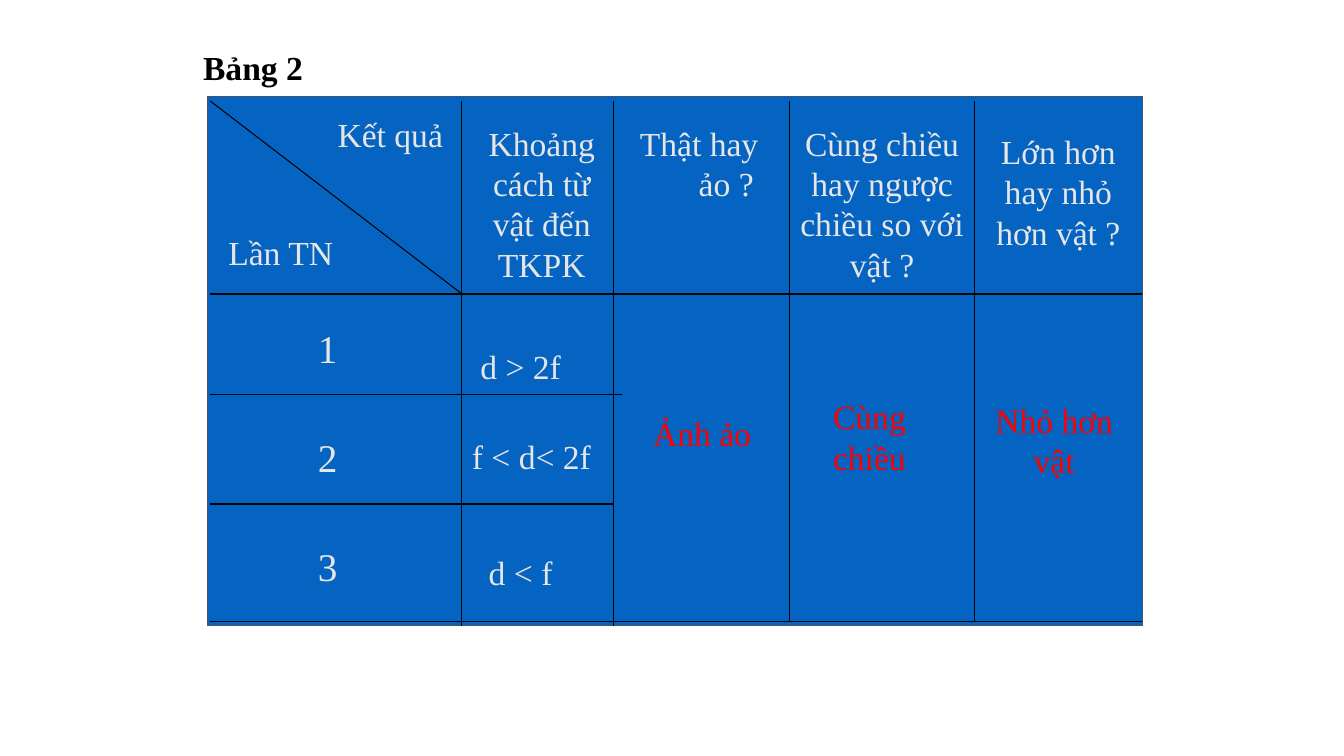
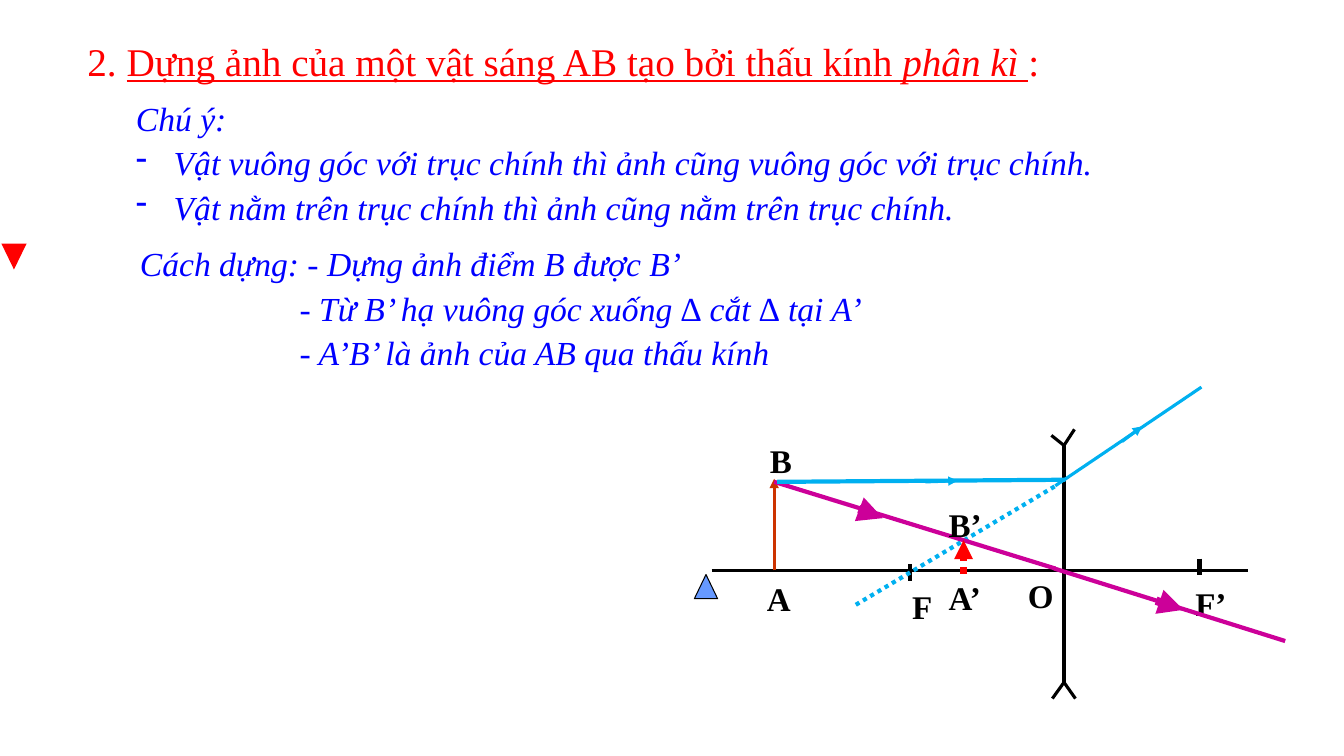
from dataclasses import dataclass, field
from typing import Optional

from lxml import etree
from pptx import Presentation
from pptx.dml.color import RGBColor
from pptx.enum import dml, shapes, text
from pptx.oxml import ns
from pptx.util import Pt

# Shared look
FONT = "Times New Roman"
BLACK = RGBColor(0x00, 0x00, 0x00)
RED = RGBColor(0xFF, 0x00, 0x00)
BLUE = RGBColor(0x00, 0x00, 0xFF)
LIGHT = RGBColor(0xE7, 0xE6, 0xE6)
TABLE_BLUE = RGBColor(0x05, 0x63, 0xC1)
TABLE_EDGE = RGBColor(0x44, 0x54, 0x6A)
OBJECT_BROWN = RGBColor(0xCC, 0x33, 0x00)
RAY_CYAN = RGBColor(0x00, 0xB0, 0xF0)
RAY_PURPLE = RGBColor(0xCC, 0x00, 0x99)
MARK_BLUE = RGBColor(0x66, 0x99, 0xFF)
LEFT, CENTER = text.PP_ALIGN.LEFT, text.PP_ALIGN.CENTER


@dataclass
class Para:
    runs: list  # (text, format values) pairs
    before: float = 0
    margin: float = 0
    indent: float = 0
    bullet: str = ""


@dataclass
class Box:
    x: float
    y: float
    w: float
    h: float
    paras: list
    size: float = 24
    color: RGBColor = LIGHT
    align: text.PP_ALIGN = LEFT
    inset: tuple = (7.2, 3.6)
    style: dict = field(default_factory=dict)


@dataclass
class Line:
    x1: float
    y1: float
    x2: float
    y2: float
    color: RGBColor = BLACK
    width: float = 0.75
    dash: Optional[dml.MSO_LINE] = None
    arrow: bool = False


def add_text(s, box: Box) -> None:
    sp = s.shapes.add_textbox(Pt(box.x), Pt(box.y), Pt(box.w), Pt(box.h))
    tf = sp.text_frame
    dx, dy = map(Pt, box.inset)
    frame = {"word_wrap": True, "auto_size": text.MSO_AUTO_SIZE.SHAPE_TO_FIT_TEXT,
             "margin_left": dx, "margin_right": dx, "margin_top": dy, "margin_bottom": dy}
    for name, value in frame.items():
        setattr(tf, name, value)
    for i, para in enumerate(box.paras):
        p = tf.add_paragraph() if i else tf.paragraphs[0]
        p.alignment = box.align
        p.space_before = Pt(para.before)
        pPr = p._p.get_or_add_pPr()
        pPr.set("marL", str(Pt(para.margin)))
        pPr.set("indent", str(Pt(para.indent)))
        if para.bullet:
            etree.SubElement(pPr, ns.qn("a:buChar")).set("char", para.bullet)
        for words, values in para.runs:
            r = p.add_run()
            r.text = words
            r.font.color.rgb = box.color
            font = {"name": FONT, "size": Pt(box.size), **box.style, **values}
            for name, value in font.items():
                setattr(r.font, name, value)


def label(words: str, x: float, y: float, w: float, h: float = 36,
          margin: float = 0, indent: float = 0, **options) -> Box:
    para = Para([(words, {})], margin=margin, indent=indent)
    return Box(x, y, w, h, [para], **options)


def add_line(s, line: Line) -> None:
    cx = s.shapes.add_connector(shapes.MSO_CONNECTOR.STRAIGHT, Pt(line.x1), Pt(line.y1),
                                Pt(line.x2), Pt(line.y2))
    cx.line.color.rgb = line.color
    cx.line.width = Pt(line.width)
    if line.dash:
        cx.line.dash_style = line.dash
    if line.arrow:
        etree.SubElement(cx.line._get_or_add_ln(), ns.qn("a:tailEnd")).set("type", "triangle")
    etree.SubElement(cx._element.spPr, ns.qn("a:effectLst"))


def add_block(s, kind: shapes.MSO_SHAPE, x: float, y: float, w: float, h: float,
              fill: RGBColor, edge: Optional[RGBColor] = None) -> None:
    sp = s.shapes.add_shape(kind, Pt(x), Pt(y), Pt(w), Pt(h))
    sp.shadow.inherit = False
    sp.fill.solid()
    sp.fill.fore_color.rgb = fill
    if edge is None:
        sp.line.fill.background()
    else:
        sp.line.color.rgb = edge
        sp.line.width = Pt(0.75)


def draw(s, items: list) -> None:
    for item in items:
        (add_line if isinstance(item, Line) else add_text)(s, item)


def build_results(s) -> None:
    # Panel and ruled grid
    add_block(s, shapes.MSO_SHAPE.RECTANGLE, 148.3, 69.1, 667.5, 378, TABLE_BLUE, TABLE_EDGE)
    left, top = 150, 72
    columns = {330: 447, 438: 447, 564: 444, 696: 444}
    rows = {210: 816, 282: 444, 360: 438, 444: 816}
    draw(s, [Line(x, top, x, bottom) for x, bottom in columns.items()])
    draw(s, [Line(left, y, right, y) for y, right in rows.items()])
    draw(s, [Line(left, top, min(columns), min(rows))])

    # Headings
    draw(s, [
        label("Kết quả", 234, 78, 96),
        label("Lần TN", 156, 162, 126),
        label("Khoảng cách từ vật đến TKPK", 336, 84, 102, 124, align=CENTER),
        label("Thật hay ảo ?", 450, 84, 102, 65.5, margin=42, indent=-42),
        label("Cùng chiều hay ngược chiều so với vật ?", 564, 84, 132, 124, align=CENTER),
        label("Lớn hơn hay nhỏ hơn vật ?", 702, 90, 108, 94, align=CENTER),
    ])

    # Trials and distances
    draw(s, [label(str(n + 1), 210, 228 + 78 * n, 48, 41, size=28, align=CENTER)
             for n in range(3)])
    draw(s, [
        label("d > 2f", 336, 243.4, 96),
        label("f < d< 2f", 330, 308, 102),
        label("d < f", 342, 391, 90),
    ])

    # Title and answers
    draw(s, [
        label("Bảng 2", 138, 30, 96, color=BLACK, style={"bold": True}),
        label("Ảnh ảo", 459.4, 291.6, 108, color=RED),
        label("Cùng chiều", 561, 279.4, 120, 65.5, color=RED, align=CENTER),
        label("Nhỏ hơn vật", 702, 282.2, 102, 65.5, color=RED, align=CENTER),
    ])


def build_lens(s) -> None:
    # Heading
    under = {"underline": True}
    heading = Para([("2. ", {}),
                    ("Dựng ảnh của một vật sáng AB tạo bởi thấu kính ", under),
                    ("phân kì ", {**under, "italic": True}),
                    (":", {})])
    # Notes and steps
    notes = [Para([("Chú ý:", {})], before=3)]
    notes += [Para([(words, {})], before=3, margin=27, indent=-27, bullet="-") for words in (
        "Vật vuông góc với trục chính thì ảnh cũng vuông góc với trục chính.",
        "Vật nằm trên trục chính thì ảnh cũng nằm trên trục chính.")]
    steps = [Para([("Cách dựng: - Dựng ảnh điểm B được B’", {})], before=3)]
    steps += [Para([(words, {})], before=3, margin=114) for words in (
        "- Từ B’ hạ vuông góc xuống ∆ cắt ∆ tại A’",
        "- A’B’ là ảnh của AB qua thấu kính")]
    body = {"color": BLUE, "style": {"italic": True}}
    draw(s, [
        Box(55.4, 23, 720, 41, [heading], size=28, color=RED),
        Box(90, 66.2, 720, 101, notes, **body),
        Box(92.9, 170, 557.3, 101, steps, **body),
    ])

    # Lens, axis, focal ticks and object
    lens_x, axis_y, lens_top, lens_bottom = 760, 407.5, 318.2, 487.4
    tips = [(751, 311, lens_top), (767.5, 306.7, lens_top),
            (751.7, 499, lens_bottom), (768.2, 499, lens_bottom)]
    draw(s, [Line(lens_x, y, x, tip_y, width=2.25) for x, tip_y, y in tips])
    draw(s, [
        Line(lens_x, lens_top, lens_x, lens_bottom, width=2.25),
        Line(508.3, axis_y, 891.4, axis_y, width=2.25),
        Line(650.2, 403.2, 650.2, 414.7, width=3),
        Line(856.8, 399, 856.8, 410.5, width=3),
        Line(553, axis_y, 553, 342, OBJECT_BROWN, 2.25, arrow=True),
    ])

    # Point names
    named = {"size": 23.6, "color": BLACK, "style": {"bold": True}}
    points = [("O", 727.2, 407.5, 16.6), ("A", 540.7, 409.7, 28.8), ("B", 542.9, 311, 24.5),
              ("F", 644.4, 415.4, 20.9), ("F’", 846.7, 413.3, 59)]
    draw(s, [label(*point, **named) for point in points])

    # Marker triangles
    add_block(s, shapes.MSO_SHAPE.FLOWCHART_EXTRACT, 496, 410.4, 16.6, 17.3, MARK_BLUE, BLACK)
    add_block(s, shapes.MSO_SHAPE.FLOWCHART_MERGE, 1, 174, 18, 18.5, RED)

    # Rays
    dots = dml.MSO_LINE.ROUND_DOT
    draw(s, [
        Line(801.4, 315.4, 815.8, 304.6, RAY_CYAN, 2.25, arrow=True),
        Line(753.8, 347, 858.2, 276.5, RAY_CYAN, 2.25),
        Line(611.3, 432, 755.3, 346.3, RAY_CYAN, 3, dots),
        Line(553, 344.2, 753.8, 406.1, RAY_PURPLE, 3),
        Line(613.4, 363.6, 630.7, 370.1, RAY_PURPLE, 6, arrow=True),
        Line(753.1, 406.1, 918, 457.9, RAY_PURPLE, 3),
        Line(825.8, 429.1, 845.3, 435.6, RAY_PURPLE, 6, arrow=True),
        Line(555.1, 344.2, 761, 342.7, RAY_CYAN, 3),
        Line(661, 344.2, 684, 343.4, RAY_CYAN, 2.25, arrow=True),
    ])

    # Image
    wide = {**named, "inset": (8.64, 4.32)}
    draw(s, [
        label("B’", 668.9, 355.7, 54, 37.4, **wide),
        Line(688.3, 409.7, 688.3, 385.9, RED, 4.5, dots, True),
        label("A’", 668.9, 408.2, 54, 37.4, **wide),
    ])


def main() -> None:
    prs = Presentation()
    prs.slide_width, prs.slide_height = Pt(960), Pt(540)
    for build in (build_results, build_lens):
        build(prs.slides.add_slide(prs.slide_layouts[6]))
    prs.save("out.pptx")


if __name__ == "__main__":
    main()
